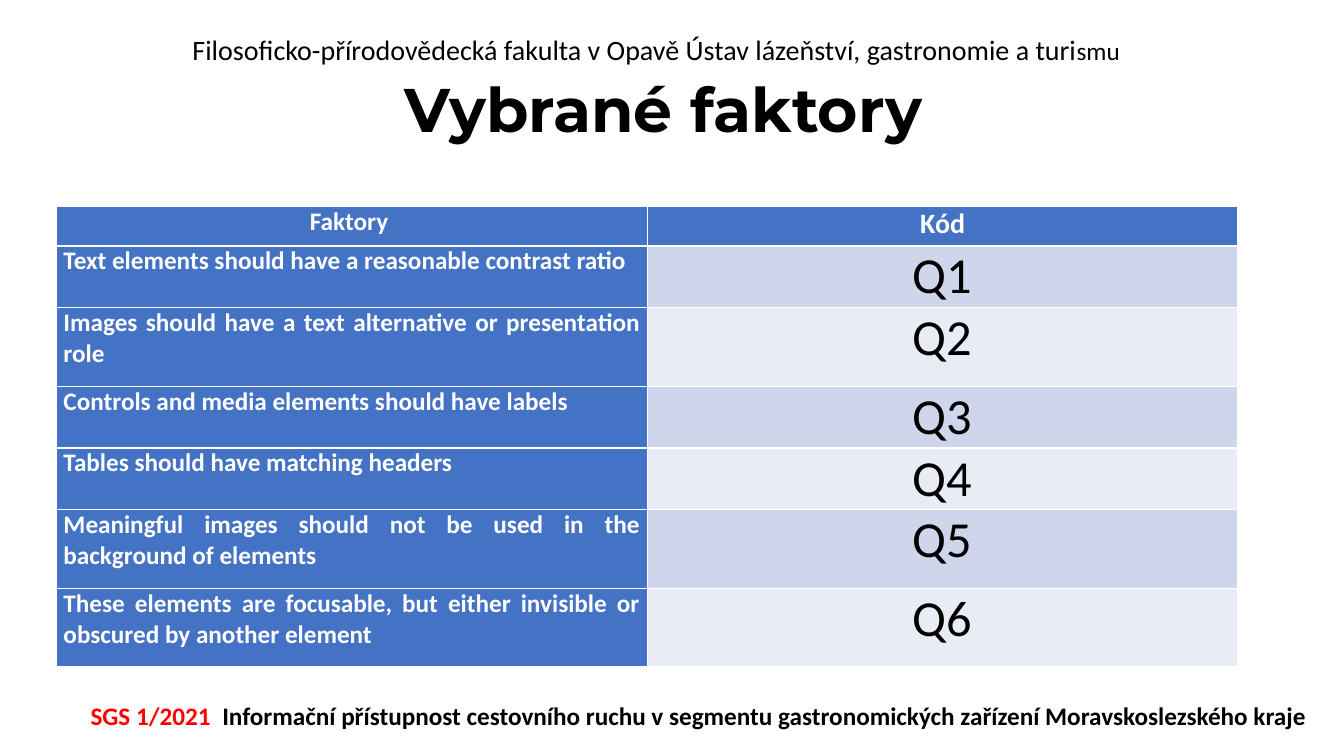
from pptx import Presentation
from pptx.dml.color import RGBColor
from pptx.enum.text import MSO_ANCHOR, PP_ALIGN
from pptx.util import Inches, Pt

CENTER, JUSTIFY, LEFT = PP_ALIGN.CENTER, PP_ALIGN.JUSTIFY, PP_ALIGN.LEFT
MIDDLE = MSO_ANCHOR.MIDDLE

BLACK = RGBColor(0x00, 0x00, 0x00)
WHITE = RGBColor(0xFF, 0xFF, 0xFF)
RED = RGBColor(0xFF, 0x00, 0x00)
BLUE = RGBColor(0x44, 0x72, 0xC4)
BANDS = (RGBColor(0xCF, 0xD5, 0xEA), RGBColor(0xE9, 0xEB, 0xF5))

TITLE = "Vybrané faktory "
FACULTY = [
    ("Filosoficko-přírodovědecká fakulta v Opavě Ústav lázeňství, gastronomie a turi", 20, BLACK),
    ("smu", 18, BLACK),
]
PROJECT = [
    ("SGS 1/2021  ", 18, RED),
    ("Informační přístupnost cestovního ruchu v segmentu gastronomických zařízení "
     "Moravskoslezského kraje", 18, BLACK),
]
HEADERS = ("Faktory ", "Kód")
HEADER_HEIGHT = 0.39
FACTORS = [
    ("Text elements should have a reasonable contrast ratio", 0.61),
    ("Images should have a text alternative or presentation role", 0.78),
    ("Controls and media elements should have labels", 0.61),
    ("Tables should have matching headers", 0.61),
    ("Meaningful images should not be used in the background of elements", 0.78),
    ("These elements are focusable, but either invisible or obscured by another element ", 0.78),
]


def format_paragraph(para, size, color, bold, align, name="Calibri"):
    para.alignment = align
    para.font.name = name
    para.font.size = Pt(size)
    para.font.bold = bold
    para.font.color.rgb = color


def fill_cell(cell, text, fill, size, color, bold, align):
    cell.fill.solid()
    cell.fill.fore_color.rgb = fill
    cell.margin_left = cell.margin_right = Inches(0.07)
    cell.margin_top = cell.margin_bottom = 0
    cell.text = text
    format_paragraph(cell.text_frame.paragraphs[0], size, color, bold, align)


def add_line(page, left, top, width, height, pieces, bold, wrap):
    box = page.shapes.add_textbox(Inches(left), Inches(top), Inches(width), Inches(height))
    box.text_frame.word_wrap = wrap
    para = box.text_frame.paragraphs[0]
    para.alignment = LEFT
    para.font.name = "Calibri"
    para.font.bold = bold
    for text, size, color in pieces:
        span = para.add_run()
        span.text = text
        span.font.size = Pt(size)
        span.font.color.rgb = color


def add_title(page):
    title = page.shapes.title
    title.left, title.top = Inches(0.92), Inches(0.59)
    title.width, title.height = Inches(11.5), Inches(1.05)
    title.text_frame.text = TITLE
    title.text_frame.vertical_anchor = MIDDLE
    para = title.text_frame.paragraphs[0]
    para.line_spacing = 0.9
    format_paragraph(para, 44, BLACK, True, CENTER, "Montserrat")


def add_factor_table(page):
    heights = [HEADER_HEIGHT] + [height for _, height in FACTORS]
    table = page.shapes.add_table(
        len(heights), len(HEADERS), Inches(0.56), Inches(2.05),
        Inches(11.72), Inches(sum(heights))).table
    table.first_col = True
    for row, height in zip(table.rows, heights):
        row.height = Inches(height)
    for column, (text, size) in enumerate(zip(HEADERS, (18, 20))):
        fill_cell(table.cell(0, column), text, BLUE, size, WHITE, True, CENTER)
    for number, (factor, _) in enumerate(FACTORS, 1):
        fill_cell(table.cell(number, 0), factor, BLUE, 18, WHITE, True, JUSTIFY)
        band = BANDS[(number - 1) % 2]
        fill_cell(table.cell(number, 1), f"Q{number}", band, 36, BLACK, False, CENTER)


def main():
    deck = Presentation()
    deck.slide_width, deck.slide_height = Inches(13.33), Inches(7.5)
    page = deck.slides.add_slide(deck.slide_layouts[5])
    add_title(page)
    add_factor_table(page)
    add_line(page, 0.8, 6.9, 12.33, 0.4, PROJECT, True, False)
    add_line(page, 1.81, 0.27, 9.59, 0.44, FACULTY, False, True)
    deck.save("out.pptx")


if __name__ == "__main__":
    main()
